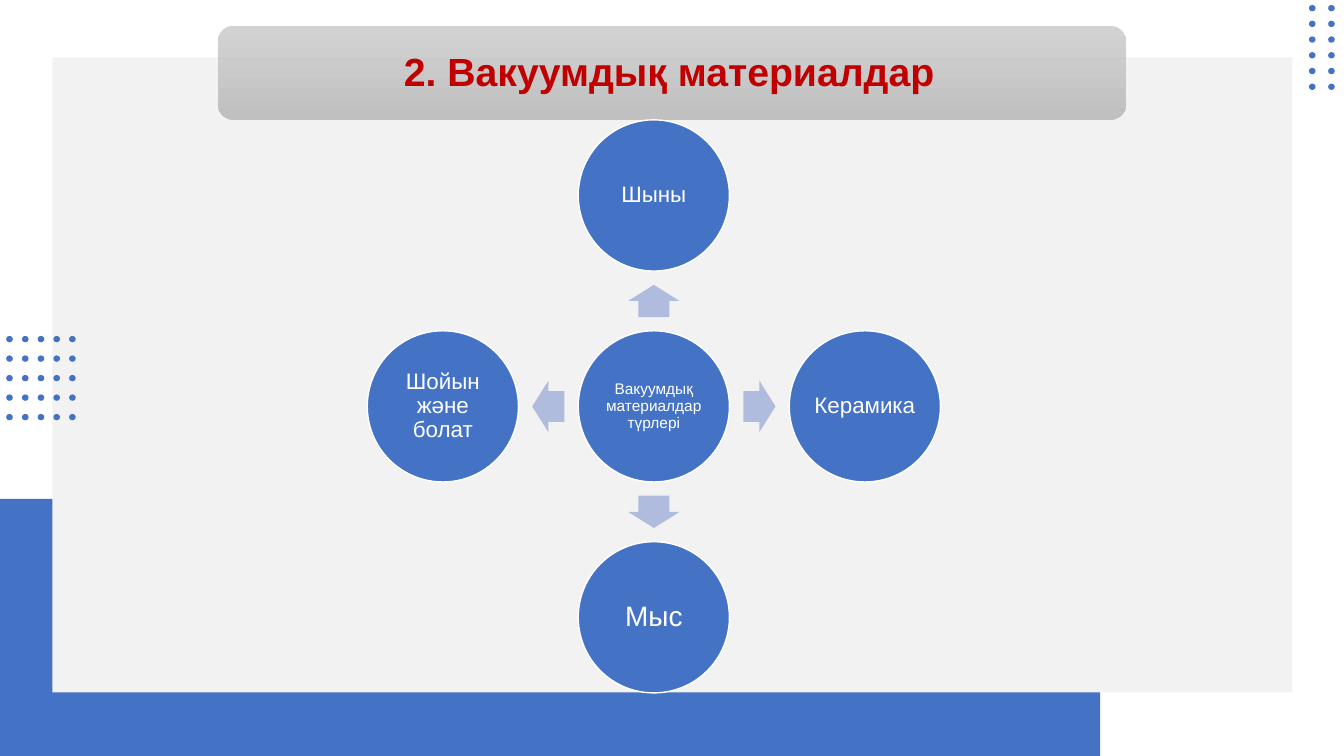
from pptx import Presentation
from pptx.dml.color import RGBColor
from pptx.enum.shapes import MSO_SHAPE
from pptx.enum.text import MSO_ANCHOR, PP_ALIGN
from pptx.util import Inches, Pt

WIDE, HIGH = Inches(13.33), Inches(7.5)
HUES = {"blue": "4472C4", "panel": "F2F2F2", "arrow": "B0BCDE", "white": "FFFFFF",
        "red": "C00000", "light": "D2D2D2", "dark": "C0C0C0"}

# Shares of the slide's width and height, in percent
HUB = (48.65, 53.76)
PITCH = (15.7, 27.9)
DISC = (11.25, 20)
ARROW = (2.4, 6.8)
DOT = (0.49, 0.84)

HUB_TEXT = ("Вакуумдық материалдар түрлері", 11)
# Text, size, column, row, arrow turn
SPOKES = [("Шыны", 16, 0, -1, 270), ("Керамика", 16, 1, 0, 0),
          ("Мыс", 20, 0, 1, 90), ("Шойын және болат", 16, -1, 0, 180)]


def hue(name):
    return RGBColor.from_string(HUES[name])


def place(x, y, w, h):
    """Turn percent shares into a left, top, width, height box."""
    return {"left": round(WIDE * x / 100), "top": round(HIGH * y / 100),
            "width": round(WIDE * w / 100), "height": round(HIGH * h / 100)}


def centre(x, y, size):
    """Box of the given size around a point."""
    w, h = size
    return place(x - w / 2, y - h / 2, w, h)


def spot(col, row):
    """Point on the diagram grid, counted from the hub."""
    return HUB[0] + col * PITCH[0], HUB[1] + row * PITCH[1]


def apply(target, values):
    for name, value in values.items():
        setattr(target, name, value)


def draw(shapes, kind, box, fill=None):
    shape = shapes.add_shape(kind, **box)
    shape.shadow.inherit = False
    shape.line.fill.background()
    if fill:
        shape.fill.solid()
        shape.fill.fore_color.rgb = hue(fill)
    return shape


def write(frame, text, size, tint, bold=False):
    frame.text = text
    apply(frame, {"word_wrap": True, "vertical_anchor": MSO_ANCHOR.MIDDLE})
    para = frame.paragraphs[0]
    apply(para, {"alignment": PP_ALIGN.CENTER, "line_spacing": 0.9})
    font = para.runs[0].font
    apply(font, {"name": "Arial", "size": Pt(size), "bold": bold})
    font.color.rgb = hue(tint)


def dots(slide, cols, rows, start, step):
    group = slide.shapes.add_group_shape()
    for col in range(cols):
        for row in range(rows):
            box = centre(start[0] + col * step[0], start[1] + row * step[1], DOT)
            draw(group.shapes, MSO_SHAPE.OVAL, box, "blue")


def banner(slide, text):
    plate = draw(slide.shapes, MSO_SHAPE.ROUNDED_RECTANGLE, place(16.2, 3.43, 67.6, 12.4))
    plate.fill.gradient()
    plate.fill.gradient_angle = 270
    for stop, name in zip(plate.fill.gradient_stops, ("light", "dark")):
        stop.color.rgb = hue(name)
    title = slide.shapes.title
    apply(title, place(15.98, 2.53, 67.6, 14.53))
    write(title.text_frame, text, 28, "red", True)
    plate.element.addnext(title.element)


def disc(shapes, text, size, col, row):
    shape = draw(shapes, MSO_SHAPE.OVAL, centre(*spot(col, row), DISC), "blue")
    shape.line.color.rgb = hue("white")
    shape.line.width = Pt(1)
    sides = ("margin_left", "margin_top", "margin_right", "margin_bottom")
    apply(shape.text_frame, dict.fromkeys(sides, Inches(0.02)))
    write(shape.text_frame, text, size, "white")


def arrow(shapes, col, row, turn):
    shape = draw(shapes, MSO_SHAPE.RIGHT_ARROW, centre(*spot(col, row), ARROW), "arrow")
    shape.adjustments[0] = 0.6
    shape.adjustments[1] = 0.5
    shape.rotation = turn


def wheel(slide):
    """Hub disc with an arrow to each outer disc."""
    shapes = slide.shapes.add_group_shape().shapes
    disc(shapes, *HUB_TEXT, 0, 0)
    for text, size, col, row, turn in SPOKES:
        arrow(shapes, col / 2, row / 2, turn)
        disc(shapes, text, size, col, row)


def main():
    deck = Presentation()
    apply(deck, {"slide_width": WIDE, "slide_height": HIGH})
    slide = deck.slides.add_slide(deck.slide_layouts.get_by_name("Title Only"))
    draw(slide.shapes, MSO_SHAPE.RECTANGLE, place(0, 66, 81.85, 34), "blue")
    draw(slide.shapes, MSO_SHAPE.RECTANGLE, place(3.9, 7.6, 92.27, 84), "panel")
    dots(slide, 2, 6, (97.64, 1.08), (1.43, 2.08))
    dots(slide, 5, 5, (0.71, 44.86), (1.17, 2.58))
    banner(slide, "2. Вакуумдық материалдар")
    wheel(slide)
    deck.save("out.pptx")


if __name__ == "__main__":
    main()
